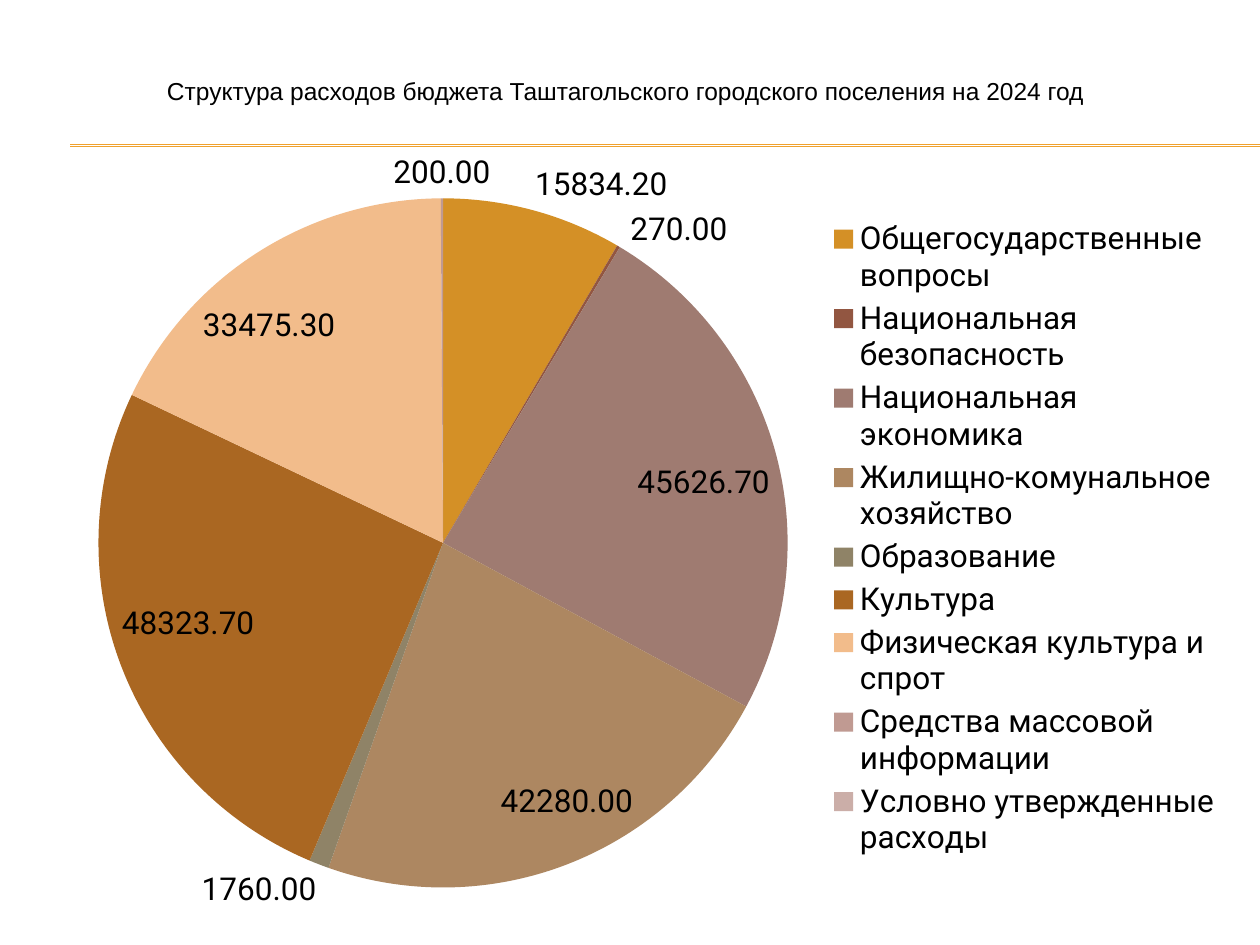
from dataclasses import dataclass

import pptx
import pptx.chart.chart
import pptx.chart.data
import pptx.dml.color
import pptx.enum.chart
import pptx.enum.shapes
import pptx.enum.text
import pptx.oxml
import pptx.oxml.ns
import pptx.slide
import pptx.util
from pptx.util import Cm

RGBColor = pptx.dml.color.RGBColor
BLACK = RGBColor(0x00, 0x00, 0x00)
AMBER = RGBColor(0xF0, 0xA2, 0x2E)
OCHRE = RGBColor(0xD4, 0x90, 0x26)
BRICK = RGBColor(0x92, 0x56, 0x41)
MAUVE = RGBColor(0x9F, 0x7B, 0x71)
TAN = RGBColor(0xAD, 0x87, 0x61)
OLIVE = RGBColor(0x8F, 0x83, 0x67)
BROWN = RGBColor(0xAA, 0x67, 0x22)
PEACH = RGBColor(0xF2, 0xBC, 0x8B)
ROSE = RGBColor(0xC0, 0x9A, 0x92)
PALE_ROSE = RGBColor(0xCB, 0xAE, 0xA8)

TITLE = "Структура расходов бюджета Таштагольского городского поселения на 2024 год"
TITLE_FONT = {"name": "Arial", "size": pptx.util.Pt(14)}
CHART_FONT = {"name": "Roboto", "size": pptx.util.Pt(18)}
LABEL_FORMAT = {
    "show_value": True,
    "number_format": "0.00",
    "number_format_is_linked": False,
    "position": pptx.enum.chart.XL_LABEL_POSITION.BEST_FIT,
}
LEGEND_FORMAT = {
    "position": pptx.enum.chart.XL_LEGEND_POSITION.RIGHT,
    "include_in_layout": False,
}


@dataclass(frozen=True)
class Expense:
    name: str
    amount: float
    color: RGBColor


@dataclass(frozen=True)
class Area:
    """Place within the chart, as fractions of its width and height."""
    x: float
    y: float
    w: float
    h: float


EXPENSES = [
    Expense("Общегосударственные вопросы", 15834.2, OCHRE),
    Expense("Национальная безопасность", 270, BRICK),
    Expense("Национальная экономика", 45626.7, MAUVE),
    Expense("Жилищно-комунальное хозяйство", 42280, TAN),
    Expense("Образование", 1760, OLIVE),
    Expense("Культура", 48323.7, BROWN),
    Expense("Физическая культура и спрот", 33475.3, PEACH),
    Expense("Средства массовой информации", 200, ROSE),
    Expense("Условно утвержденные расходы", 0, PALE_ROSE),
]
PIE_AREA = Area(0.06, 0.09, 0.57, 0.84)
LEGEND_AREA = Area(0.66, 0.11, 0.33, 0.79)


def apply_format(target: object, values: dict) -> None:
    for name, value in values.items():
        setattr(target, name, value)


def chart_xml(tag: str, content: str):
    return pptx.oxml.parse_xml(
        f"<c:{tag} {pptx.oxml.ns.nsdecls('c')}>{content}</c:{tag}>")


def layout_xml(area: Area, inner: bool = False):
    target = '<c:layoutTarget val="inner"/>' if inner else ""
    modes = "".join(f'<c:{axis}Mode val="edge"/>' for axis in "xy")
    sizes = "".join(f'<c:{side} val="{getattr(area, side)}"/>' for side in "xywh")
    return chart_xml("layout", f"<c:manualLayout>{target}{modes}{sizes}</c:manualLayout>")


def set_layout(element, layout, index: int) -> None:
    """Put the layout in place of any that the element already has."""
    for old in element.findall(pptx.oxml.ns.qn("c:layout")):
        element.remove(old)
    element.insert(index, layout)


def add_rule(slide: pptx.slide.Slide, top: Cm) -> None:
    rule = slide.shapes.add_connector(
        pptx.enum.shapes.MSO_CONNECTOR.STRAIGHT, Cm(1.42), top, Cm(25.4), top)
    rule.line.color.rgb = AMBER
    rule.line.width = pptx.util.Pt(0.75)
    rule._element.spPr.append(
        pptx.oxml.parse_xml(f"<a:effectLst {pptx.oxml.ns.nsdecls('a')}/>"))


def add_title(slide: pptx.slide.Slide) -> None:
    frame = slide.shapes.add_textbox(Cm(1.4), Cm(1.4), Cm(22.43), Cm(0.86)).text_frame
    frame.word_wrap = True
    paragraph = frame.paragraphs[0]
    paragraph.alignment = pptx.enum.text.PP_ALIGN.CENTER
    run = paragraph.add_run()
    run.text = TITLE
    apply_format(run.font, TITLE_FONT)
    run.font.color.rgb = BLACK


def add_expense_pie(slide: pptx.slide.Slide) -> None:
    data = pptx.chart.data.CategoryChartData()
    data.categories = [expense.name for expense in EXPENSES]
    data.add_series("Series 1", [expense.amount for expense in EXPENSES])
    chart = slide.shapes.add_chart(
        pptx.enum.chart.XL_CHART_TYPE.PIE,
        Cm(0.51), Cm(2.51), Cm(24.41), Cm(16.54), data).chart
    chart.has_title = False
    chart.has_legend = True
    apply_format(chart.font, CHART_FONT)
    chart.font.color.rgb = BLACK
    apply_format(chart.legend, LEGEND_FORMAT)

    pie = chart.plots[0]
    pie.vary_by_categories = True
    series = pie.series[0]
    labels = series.data_labels
    apply_format(labels, LABEL_FORMAT)
    for index, expense in enumerate(EXPENSES):
        fill = series.points[index].format.fill
        fill.solid()
        fill.fore_color.rgb = expense.color
    empty = [i for i, expense in enumerate(EXPENSES) if not expense.amount]
    for place, index in enumerate(empty):
        labels._element.insert(
            place, chart_xml("dLbl", f'<c:idx val="{index}"/><c:delete val="1"/>'))

    set_layout(chart._chartSpace.chart.plotArea, layout_xml(PIE_AREA, inner=True), 0)
    set_layout(chart.legend._element, layout_xml(LEGEND_AREA), 1)


def main() -> None:
    deck = pptx.Presentation()
    deck.slide_width, deck.slide_height = Cm(25.4), Cm(19.05)
    slide = deck.slides.add_slide(deck.slide_layouts[6])
    for top in (Cm(2.92), Cm(2.95)):
        add_rule(slide, top)
    add_title(slide)
    add_expense_pie(slide)
    deck.save("out.pptx")


if __name__ == "__main__":
    main()
